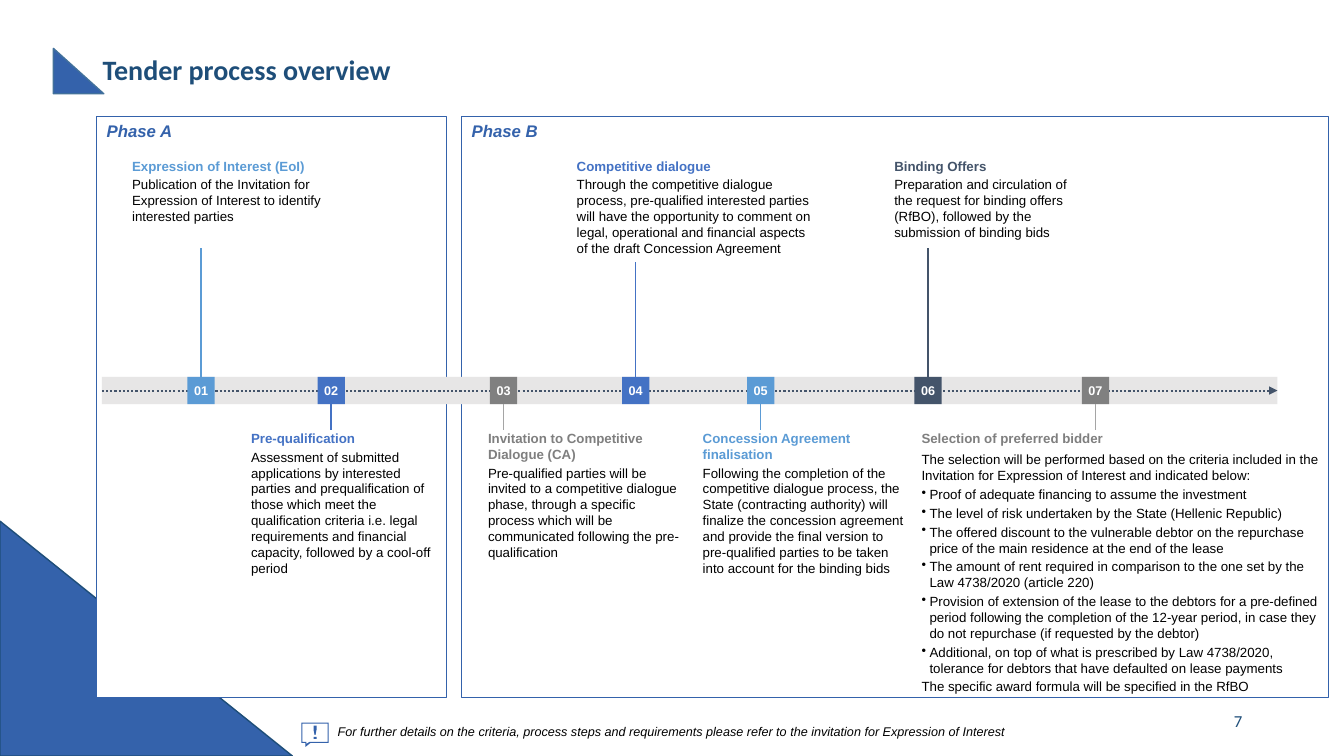
from dataclasses import dataclass, field
from typing import Any

from lxml import etree
from pptx import Presentation, slide as deck, util as u
from pptx.dml import color
from pptx.enum import dml, shapes, text
from pptx.oxml import ns
from pptx.shapes import autoshape, connector as link

CELL = u.Inches(0.01)
COLUMNS, ROWS = 1333, 750
MARKER_SIZE, BAND_TOP = 27, 374
UPPER_ROW, LOWER_ROW = 157, 427
TOP_SIDE, LEFT_SIDE, BOTTOM_SIDE, RIGHT_SIDE = range(4)


@dataclass(frozen=True)
class Theme:
    royal: str = "3462AB"
    navy: str = "1E4E79"
    edge: str = "42719B"
    sky: str = "5B9BD5"
    blue: str = "4472C4"
    slate: str = "44546A"
    grey: str = "808080"
    heading_grey: str = "7F7F7F"
    stem_grey: str = "A5A5A5"
    band: str = "E7E6E6"
    white: str = "FFFFFF"
    black: str = "000000"
    body_font: str = "Arial"
    title_font: str = "Calibri"
    title_size: float = 20
    phase_size: float = 12
    card_size: float = 9.5
    small_size: float = 9


THEME = Theme()


@dataclass(frozen=True)
class Box:
    column: int
    row: int
    columns: int
    rows: int

    def lengths(self) -> list[int]:
        return [CELL * cells for cells in (self.column, self.row, self.columns, self.rows)]


@dataclass(frozen=True)
class Line:
    words: str
    size: float = THEME.card_size
    colour: str = THEME.black
    font: dict[str, Any] = field(default_factory=dict)
    layout: dict[str, Any] = field(default_factory=dict)
    bullet: bool = False


@dataclass(frozen=True)
class Step:
    number: str
    column: int
    fill: str
    heading_colour: str
    stem_colour: str
    stem_row: int
    card: Box
    heading: str
    body: str


STEPS = [
    Step("01", 186, THEME.sky, THEME.sky, THEME.sky, 246, Box(131, UPPER_ROW, 195, 80),
         "Expression of Interest (EoI)",
         "Publication of the Invitation for Expression of Interest to identify interested parties"),
    Step("02", 315, THEME.blue, THEME.blue, THEME.blue, LOWER_ROW, Box(249, LOWER_ROW, 189, 155),
         "Pre-qualification",
         "Assessment of submitted applications by interested parties and prequalification of those which meet "
         "the qualification criteria i.e. legal requirements and financial capacity, followed by a cool-off period"),
    Step("03", 486, THEME.grey, THEME.heading_grey, THEME.stem_grey, LOWER_ROW, Box(484, LOWER_ROW, 191, 152),
         "Invitation to Competitive Dialogue (CA)",
         "Pre-qualified parties will be invited to a competitive dialogue phase, through a specific process "
         "which will be communicated following the pre-qualification"),
    Step("04", 617, THEME.blue, THEME.blue, THEME.blue, 260, Box(572, UPPER_ROW, 237, 103),
         "Competitive dialogue",
         "Through the competitive dialogue process, pre-qualified interested parties will have the opportunity "
         "to comment on legal, operational and financial aspects of the draft Concession Agreement"),
    Step("05", 741, THEME.sky, THEME.sky, THEME.sky, LOWER_ROW, Box(697, LOWER_ROW, 206, 155),
         "Concession Agreement finalisation",
         "Following the completion of the competitive dialogue process, the State (contracting authority) will "
         "finalize the concession agreement and provide the final version to pre-qualified parties to be taken "
         "into account for the binding bids"),
    Step("06", 907, THEME.slate, THEME.slate, THEME.slate, 246, Box(887, UPPER_ROW, 187, 89),
         "Binding Offers",
         "Preparation and circulation of the request for binding offers (RfBO), followed by the submission of "
         "binding bids"),
    Step("07", 1073, THEME.grey, THEME.heading_grey, THEME.stem_grey, LOWER_ROW, Box(914, LOWER_ROW, 394, 223),
         "Selection of preferred bidder",
         "The selection will be performed based on the criteria included in the Invitation for Expression of "
         "Interest and indicated below:"),
]

CRITERIA = [
    "Proof of adequate financing to assume the investment",
    "The level of risk undertaken by the State (Hellenic Republic)",
    "The offered discount to the vulnerable debtor on the repurchase price of the main residence at the end of the lease",
    "The amount of rent required in comparison to the one set by the Law 4738/2020 (article 220)",
    "Provision of extension of the lease to the debtors for a pre-defined period following the completion of the "
    "12-year period, in case they do not repurchase (if requested by the debtor)",
    "Additional, on top of what is prescribed by Law 4738/2020, tolerance for debtors that have defaulted on lease payments",
]
AWARD_NOTE = "The specific award formula will be specified in the RfBO"

BUBBLE = [
    [(299, 717), (299, 737), (303, 737), (303, 741), (308, 737), (326, 737), (326, 717)],
    [(307, 736), (304, 738), (304, 736), (300, 736), (300, 718), (325, 718), (325, 736)],
]
EXCLAMATION = [
    [(314, 731), (314, 733), (311, 733), (311, 731)],
    [(313, 729), (312, 729), (311, 724), (311, 720), (314, 720), (314, 724)],
]


def apply(target: Any, formats: dict[str, Any]) -> None:
    for name, value in formats.items():
        setattr(target, name, value)


def rgb(value: str) -> color.RGBColor:
    return color.RGBColor.from_string(value)


def paint(shape: autoshape.Shape, fill: str, outline: str | None = None, width: float = 1) -> None:
    shape.shadow.inherit = False
    shape.fill.solid()
    shape.fill.fore_color.rgb = rgb(fill)
    if outline:
        shape.line.color.rgb = rgb(outline)
        shape.line.width = u.Pt(width)
    else:
        shape.line.fill.background()


def add_bullet(paragraph: Any) -> None:
    properties = paragraph._p.get_or_add_pPr()
    apply_indent = {"marL": CELL * 8, "indent": -CELL * 8}
    for name, value in apply_indent.items():
        properties.set(name, str(value))
    bullet_colour = etree.SubElement(properties, ns.qn("a:buClr"))
    etree.SubElement(bullet_colour, ns.qn("a:srgbClr")).set("val", THEME.black)
    etree.SubElement(properties, ns.qn("a:buChar")).set("char", "•")


def write(shape: autoshape.Shape, lines: list[Line], inset: bool = False,
          anchor: text.MSO_ANCHOR = text.MSO_ANCHOR.TOP) -> None:
    frame = shape.text_frame
    side, edge = (CELL * 10, CELL * 5) if inset else (0, 0)
    apply(frame, {"word_wrap": True, "vertical_anchor": anchor, "margin_left": side,
                  "margin_right": side, "margin_top": edge, "margin_bottom": edge})
    for index, line in enumerate(lines):
        paragraph = frame.add_paragraph() if index else frame.paragraphs[0]
        apply(paragraph, {"alignment": text.PP_ALIGN.LEFT} | line.layout)
        if line.bullet:
            add_bullet(paragraph)
        run = paragraph.add_run()
        run.text = line.words
        apply(run.font, {"name": THEME.body_font, "size": u.Pt(line.size)} | line.font)
        run.font.color.rgb = rgb(line.colour)


def add_block(slide: deck.Slide, box: Box, fill: str, outline: str | None = None, width: float = 1,
              kind: shapes.MSO_SHAPE = shapes.MSO_SHAPE.RECTANGLE) -> autoshape.Shape:
    shape = slide.shapes.add_shape(kind, *box.lengths())
    paint(shape, fill, outline, width)
    return shape


def add_text(slide: deck.Slide, box: Box, lines: list[Line], **options: Any) -> None:
    write(slide.shapes.add_textbox(*box.lengths()), lines, **options)


def add_rule(slide: deck.Slide, start: tuple[int, int], end: tuple[int, int],
             colour: str, width: float = 1) -> link.Connector:
    rule = slide.shapes.add_connector(shapes.MSO_CONNECTOR.STRAIGHT, *(int(CELL * cells) for cells in start + end))
    rule.line.color.rgb = rgb(colour)
    rule.line.width = u.Pt(width)
    etree.SubElement(rule._element.spPr, ns.qn("a:effectLst"))
    return rule


def add_outline(slide: deck.Slide, contours: list[list[tuple[int, int]]]) -> None:
    first, *others = contours
    builder = slide.shapes.build_freeform(*first[0], scale=CELL)
    builder.add_line_segments(first[1:])
    for contour in others:
        builder.move_to(*contour[0])
        builder.add_line_segments(contour[1:])
    paint(builder.convert_to_shape(), THEME.royal)


def add_axis(slide: deck.Slide) -> None:
    box = Box(101, BAND_TOP, 1166, MARKER_SIZE)
    band = add_block(slide, box, THEME.band)
    middle = BAND_TOP + MARKER_SIZE / 2
    axis = add_rule(slide, (box.column, middle), (box.column + box.columns, middle), THEME.slate, 1.5)
    axis.begin_connect(band, LEFT_SIDE)
    axis.end_connect(band, RIGHT_SIDE)
    axis.line.dash_style = dml.MSO_LINE.ROUND_DOT
    etree.SubElement(axis.line._get_or_add_ln(), ns.qn("a:tailEnd")).set("type", "triangle")


def add_step(slide: deck.Slide, step: Step) -> None:
    marker = add_block(slide, Box(step.column, BAND_TOP, MARKER_SIZE, MARKER_SIZE), step.fill)
    write(marker, [Line(step.number, THEME.small_size, THEME.white, {"bold": True},
                        {"alignment": text.PP_ALIGN.CENTER})], anchor=text.MSO_ANCHOR.MIDDLE)
    middle = step.column + MARKER_SIZE / 2
    above = step.stem_row < BAND_TOP
    start_row = BAND_TOP if above else BAND_TOP + MARKER_SIZE
    stem = add_rule(slide, (middle, start_row), (middle, step.stem_row), step.stem_colour)
    stem.begin_connect(marker, TOP_SIDE if above else BOTTOM_SIDE)
    last = step is STEPS[-1]
    after = {"space_after": u.Pt(2)} if last else {}
    lines = [Line(step.heading, colour=step.heading_colour, font={"bold": True}, layout=after),
             Line(step.body, layout={"space_before": u.Pt(1.7)} | after)]
    if last:
        lines += [Line(criterion, layout=after, bullet=True) for criterion in CRITERIA]
        lines.append(Line(AWARD_NOTE, layout=after))
    add_text(slide, step.card, lines)


def main() -> None:
    presentation = Presentation()
    apply(presentation, {"slide_width": CELL * COLUMNS, "slide_height": CELL * ROWS})
    slide = presentation.slides.add_slide(presentation.slide_layouts[6])
    triangle = shapes.MSO_SHAPE.RIGHT_TRIANGLE
    add_block(slide, Box(0, 517, 290, 233), THEME.royal, THEME.navy, kind=triangle)
    for name, column, columns in (("Phase B", 458, 860), ("Phase A", 96, 347)):
        phase = add_block(slide, Box(column, 115, columns, 577), THEME.white, THEME.royal, 0.5)
        write(phase, [Line(name, THEME.phase_size, THEME.royal, {"bold": True, "italic": True})], inset=True)
    middle = text.MSO_ANCHOR.MIDDLE
    add_text(slide, Box(92, 40, 1150, 61),
             [Line("Tender process overview", THEME.title_size, THEME.navy,
                   {"name": THEME.title_font, "bold": True}, {"line_spacing": 0.9})], inset=True, anchor=middle)
    add_text(slide, Box(942, 695, 300, 40),
             [Line("7", THEME.phase_size, THEME.navy, {"name": THEME.title_font},
                   {"alignment": text.PP_ALIGN.RIGHT})], inset=True, anchor=middle)
    add_block(slide, Box(53, 48, 50, 45), THEME.royal, THEME.edge, kind=triangle)
    add_axis(slide)
    for step in STEPS:
        add_step(slide, step)
    for contours in (BUBBLE, EXCLAMATION):
        add_outline(slide, contours)
    add_text(slide, Box(335, 709, 733, 33),
             [Line("For further details on the criteria, process steps and requirements please refer to the "
                   "invitation for Expression of Interest", THEME.small_size, font={"italic": True})], anchor=middle)
    presentation.save("out.pptx")


if __name__ == "__main__":
    main()
